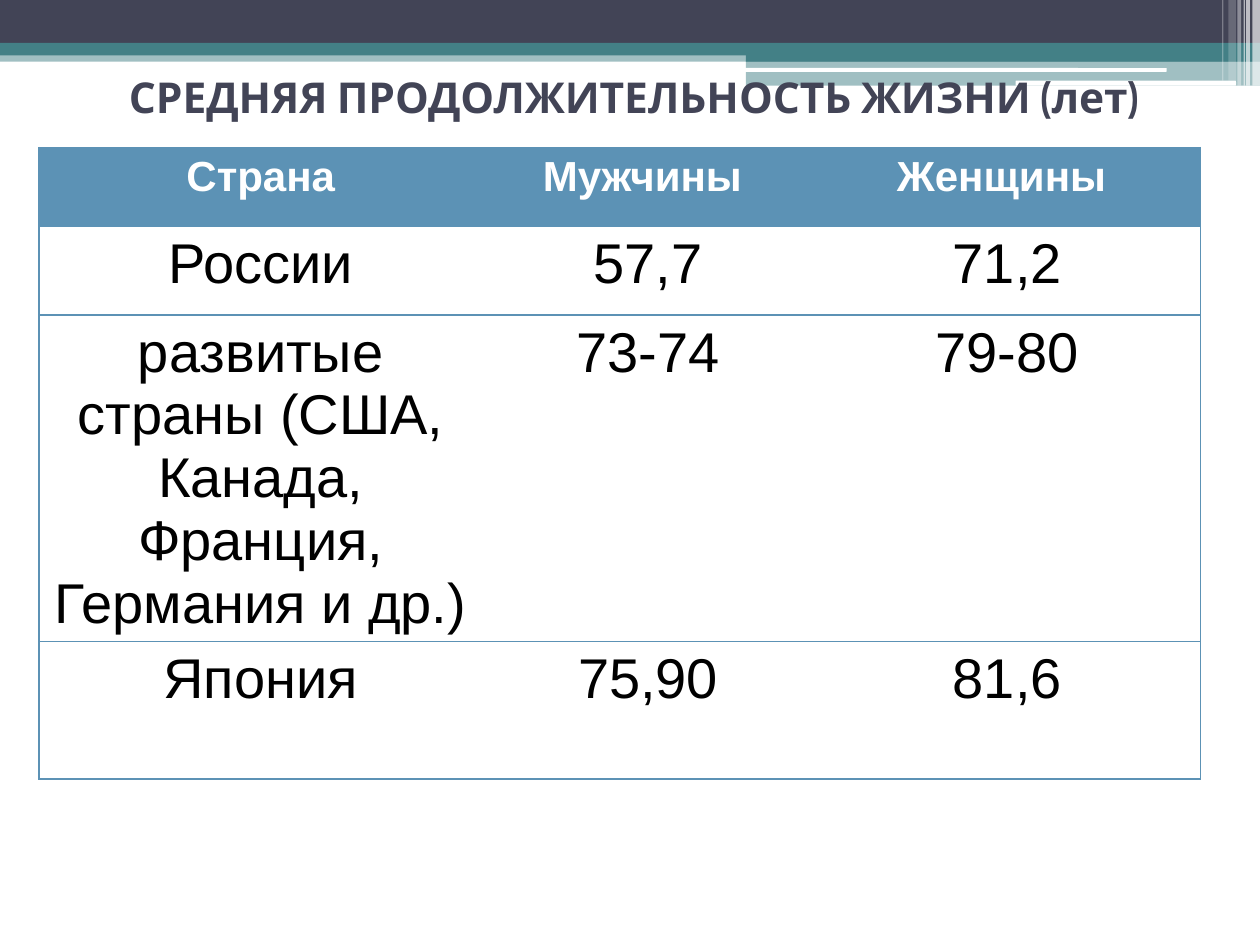
from pptx import Presentation
from pptx.dml.color import RGBColor
from pptx.enum.shapes import MSO_SHAPE as Shape
from pptx.enum.text import MSO_ANCHOR as Anchor, PP_ALIGN as Align
from pptx.oxml.ns import qn
from pptx.util import Inches, Pt
from lxml.etree import SubElement

NAVY = RGBColor(0x42, 0x44, 0x56)
TEAL = RGBColor(0x43, 0x80, 0x86)
BLUE = RGBColor(0x5C, 0x92, 0xB5)
WHITE = RGBColor(0xFF, 0xFF, 0xFF)
BLACK = RGBColor(0, 0, 0)

# left, top, width, height, colour, opacity in percent
BANDS = [
    (0, 0.4, 10, 0.09, TEAL, 50),
    (0, 0, 10, 0.34, NAVY, 100),
    (0, 0.34, 10, 0.1, TEAL, 100),
    (5.92, 0.39, 4.08, 0.1, TEAL, 100),
    (5.92, 0.48, 4.08, 0.2, TEAL, 50),
]
PILLS = [(5.91, 0.54, 3.35, 0.03), (8.06, 0.64, 1.75, 0.04)]
# left, width, height, opacity in percent
STRIPES = [
    (9.94, 0.06, 0.68, 65),
    (9.89, 0.03, 0.68, 65),
    (9.87, 0.01, 0.68, 60),
    (9.82, 0.03, 0.68, 40),
    (9.75, 0.06, 0.64, 20),
    (9.7, 0.01, 0.64, 30),
]

TITLE = "СРЕДНЯЯ ПРОДОЛЖИТЕЛЬНОСТЬ ЖИЗНИ (лет)"
ROWS = [
    ("Страна", "Мужчины ", "Женщины "),
    ("России", "57,7", "71,2"),
    ("развитые страны (США, Канада, Франция, Германия и др.)", "73-74", "79-80"),
    ("Япония", "75,90", "81,6"),
]
WIDTHS = [3.52, 2.63, 3.07]
HEIGHTS = [0.63, 0.7, 2.59, 1.09]


def add_block(slide, left, top, width, height, color, alpha=100, kind=Shape.RECTANGLE):
    block = slide.shapes.add_shape(
        kind, Inches(left), Inches(top), Inches(width), Inches(height))
    block.shadow.inherit = False
    block.line.fill.background()
    block.fill.solid()
    block.fill.fore_color.rgb = color
    if alpha < 100:
        tint = block.element.spPr.find(qn("a:solidFill"))[0]
        SubElement(tint, qn("a:alpha"), val=str(alpha * 1000))


def add_banner(slide):
    for band in BANDS:
        add_block(slide, *band)
    for pill in PILLS:
        add_block(slide, *pill, WHITE, kind=Shape.ROUNDED_RECTANGLE)
    for left, width, height, alpha in STRIPES:
        add_block(slide, left, 0, width, height, WHITE, alpha)


def style_text(frame, font, size, color, bold):
    for para in frame.paragraphs:
        para.alignment = Align.CENTER
        for run in para.runs:
            run.font.name = font
            run.font.size = Pt(size)
            run.font.bold = bold
            run.font.color.rgb = color


def set_title(slide):
    """Fill the title and bring it in front of the banner."""
    title = slide.shapes.title
    title.left, title.top = Inches(0.31), Inches(0.31)
    title.width, title.height = Inches(9.45), Inches(0.7)
    frame = title.text_frame
    frame.text = TITLE
    frame.vertical_anchor = Anchor.MIDDLE
    frame.margin_top, frame.margin_bottom = Inches(0.27), Inches(0.05)
    style_text(frame, "Cabin", 24.3, NAVY, True)
    title.element.getparent().append(title.element)


def set_edges(cell, shown):
    """Draw the named sides of a cell and hide the others."""
    props = cell._tc.get_or_add_tcPr()
    for spot, side in enumerate(("L", "R", "T", "B")):
        edge = props.makeelement(qn("a:ln" + side), {"w": str(Pt(0.75))})
        if side in shown:
            fill = SubElement(edge, qn("a:solidFill"))
            SubElement(fill, qn("a:srgbClr"), val=str(BLUE))
        else:
            SubElement(edge, qn("a:noFill"))
        props.insert(spot, edge)


def add_grid(slide):
    table = slide.shapes.add_table(
        len(ROWS), len(WIDTHS), Inches(0.31), Inches(1.17),
        Inches(sum(WIDTHS)), Inches(sum(HEIGHTS))).table
    for col, width in zip(table.columns, WIDTHS):
        col.width = Inches(width)
    for r, (texts, height) in enumerate(zip(ROWS, HEIGHTS)):
        table.rows[r].height = Inches(height)
        head = r == 0
        for c, text in enumerate(texts):
            cell = table.cell(r, c)
            cell.text = text
            if head:
                cell.fill.solid()
                cell.fill.fore_color.rgb = BLUE
                style_text(cell.text_frame, "Arial", 24, WHITE, True)
            else:
                cell.fill.background()
                style_text(cell.text_frame, "Arial", 32, BLACK, False)
            set_edges(cell, "TB" + {0: "L", len(WIDTHS) - 1: "R"}.get(c, ""))


def main():
    deck = Presentation()
    deck.slide_width, deck.slide_height = Inches(10), Inches(7.5)
    slide = deck.slides.add_slide(deck.slide_layouts[5])
    add_banner(slide)
    set_title(slide)
    add_grid(slide)
    deck.save("out.pptx")


if __name__ == "__main__":
    main()
